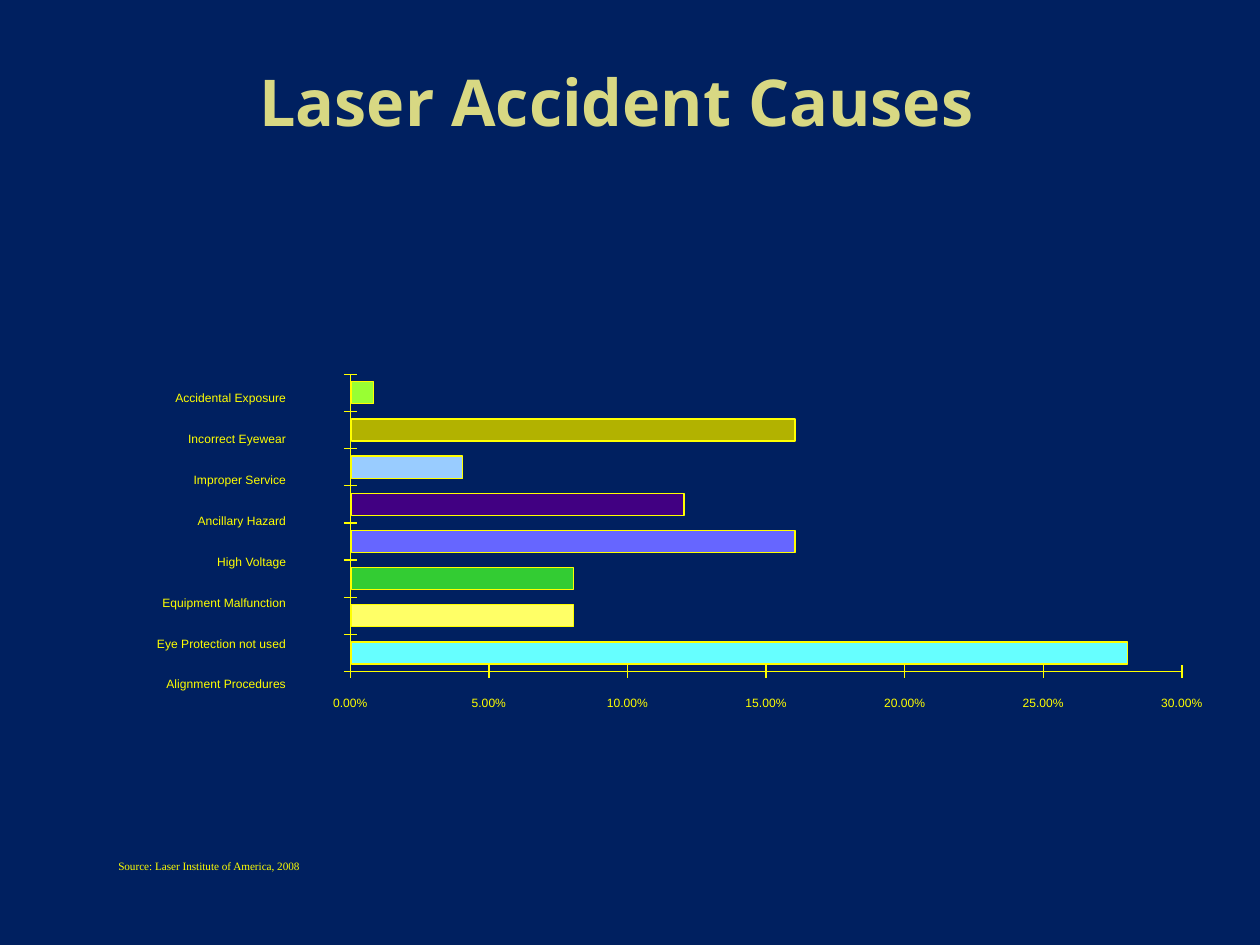
from lxml.etree import SubElement
from pptx import Presentation
from pptx.dml.color import RGBColor
from pptx.enum.shapes import MSO_CONNECTOR, MSO_SHAPE
from pptx.enum.text import MSO_ANCHOR, PP_ALIGN
from pptx.oxml.ns import qn
from pptx.util import Inches, Pt

COLORS = {
    "navy": "002060", "sand": "D8D883", "yellow": "FFFF00",
    "lime": "99FF33", "olive": "B2B200", "sky": "99CCFF", "indigo": "410082",
    "violet": "6666FF", "green": "33CC33", "lemon": "FFFF66", "cyan": "66FFFF",
}
CAUSES = [  # cause, percent of accidents, bar colour
    ("Accidental Exposure", 0.8, "lime"),
    ("Incorrect Eyewear", 16, "olive"),
    ("Improper Service", 4, "sky"),
    ("Ancillary Hazard", 12, "indigo"),
    ("High Voltage", 16, "violet"),
    ("Equipment Malfunction", 8, "green"),
    ("Eye Protection not used", 8, "lemon"),
    ("Alignment Procedures", 28, "cyan"),
]

# Grid of 100 columns by 75 rows
AXIS_LEFT, AXIS_TOP = 27.8, 29.7
BAND = 2.95
AXIS_BOTTOM = AXIS_TOP + BAND * len(CAUSES)
COLUMNS_PER_PERCENT = 2.2
TICK = 0.5
BAR_HEIGHT = 1.75
LABEL_WIDTH, LABEL_HEIGHT = 7.8, 3


def color(name):
    return RGBColor.from_string(COLORS[name])


class SlideBuilder:
    def __init__(self, deck):
        self.page = deck.slides.add_slide(deck.slide_layouts[6])
        self.column = deck.slide_width / 100
        self.row = deck.slide_height / 75
        background = self.page.background.fill
        background.solid()
        background.fore_color.rgb = color("navy")

    def place(self, left, top, width, height):
        """Turn columns and rows into slide lengths."""
        return (round(left * self.column), round(top * self.row),
                round(width * self.column), round(height * self.row))

    def text(self, area, lines, size=12, font="Arial", ink="yellow",
             align=PP_ALIGN.LEFT, bold=False, lowered=True, wrap=True):
        box = self.page.shapes.add_textbox(*self.place(*area))
        frame = box.text_frame
        frame.word_wrap = wrap
        frame.text = "\n".join(lines)
        for index, para in enumerate(frame.paragraphs):
            para.alignment = align
            if index:
                para.space_before = Pt(7)
            for span in para.runs:
                span.font.name = font
                span.font.size = Pt(size)
                span.font.bold = bold
                span.font.color.rgb = color(ink)
                if lowered:
                    span.font._element.set("baseline", "-25000")
        return frame

    def bar(self, area, fill):
        shape = self.page.shapes.add_shape(MSO_SHAPE.RECTANGLE, *self.place(*area))
        shape.shadow.inherit = False
        shape.fill.solid()
        shape.fill.fore_color.rgb = color(fill)
        shape.line.color.rgb = color("yellow")
        shape.line.width = Pt(0.75)

    def line(self, left, top, right, bottom):
        connector = self.page.shapes.add_connector(
            MSO_CONNECTOR.STRAIGHT, *self.place(left, top, right, bottom))
        connector.line.color.rgb = color("yellow")
        connector.line.width = Pt(0.75)
        SubElement(connector._element.spPr, qn("a:effectLst"))


def main():
    deck = Presentation()
    deck.slide_width, deck.slide_height = Inches(10), Inches(7.5)
    slide = SlideBuilder(deck)

    title = slide.text((19.2, 1.7, 59.5, 12.5), ["Laser Accident Causes"], 36.9,
                       "Noto Sans", "sand", PP_ALIGN.CENTER, bold=True, lowered=False)
    title.vertical_anchor = MSO_ANCHOR.MIDDLE
    title.margin_left = title.margin_right = 0

    for index, (_, percent, fill) in enumerate(CAUSES):
        top = AXIS_TOP + BAND * index + 0.6
        slide.bar((AXIS_LEFT + 0.1, top, percent * COLUMNS_PER_PERCENT, BAR_HEIGHT), fill)

    axis_right = AXIS_LEFT + 30 * COLUMNS_PER_PERCENT
    slide.line(AXIS_LEFT - TICK, AXIS_BOTTOM, axis_right, AXIS_BOTTOM)
    slide.line(AXIS_LEFT, AXIS_TOP, AXIS_LEFT, AXIS_BOTTOM + TICK)
    for index in range(len(CAUSES)):
        y = AXIS_TOP + BAND * index
        slide.line(AXIS_LEFT - TICK, y, AXIS_LEFT + TICK, y)

    for percent in range(0, 31, 5):
        x = AXIS_LEFT + percent * COLUMNS_PER_PERCENT
        if percent:
            slide.line(x, AXIS_BOTTOM - TICK, x, AXIS_BOTTOM + TICK)
        slide.text((x - LABEL_WIDTH / 2, AXIS_BOTTOM + 0.3, LABEL_WIDTH, LABEL_HEIGHT),
                   [f"{percent:.2f}%"], align=PP_ALIGN.CENTER)

    slide.text((2.5, 29.4, 21.2, 24), [cause for cause, _, _ in CAUSES],
               align=PP_ALIGN.RIGHT)
    slide.text((8.4, 66.7, 18.8, 2.2), ["Source: Laser Institute of America, 2008"],
               11, "Times New Roman", wrap=False)

    deck.save("out.pptx")


if __name__ == "__main__":
    main()
